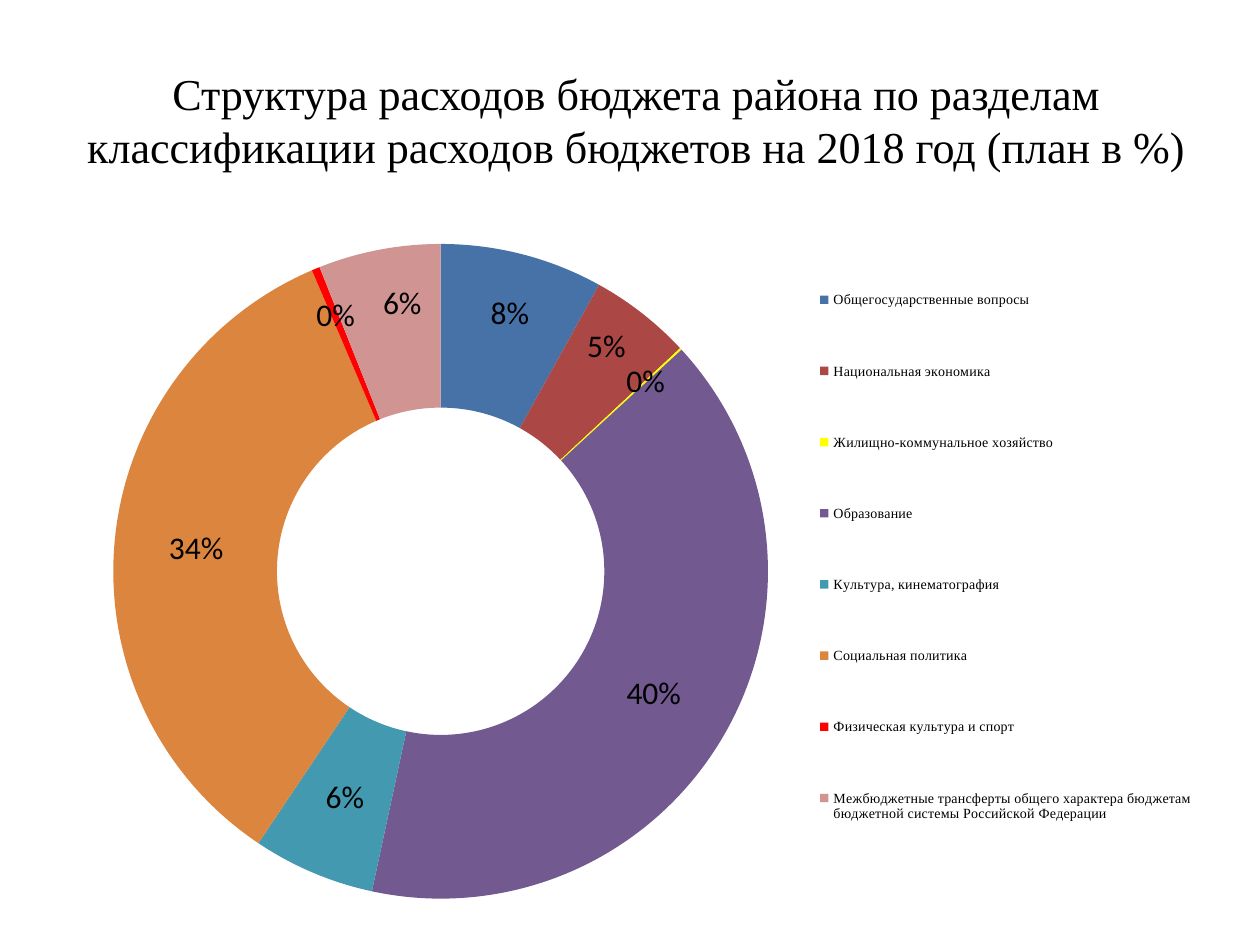
from lxml import etree
from pptx import Presentation, util as u
from pptx.chart.data import CategoryChartData
from pptx.dml.color import RGBColor
from pptx.enum import chart as ch, text
from pptx.oxml.ns import qn

TITLE = ("Структура расходов бюджета района по разделам "
         "классификации расходов бюджетов на 2018 год (план в %)")
SECTIONS = [  # section, share of spending in %, colour, label shift in % of the chart
    ("Общегосударственные вопросы", 8, "blue", (0.7, -2.9)),
    ("Национальная экономика", 5, "brick", (1.3, -4.5)),
    ("Жилищно-коммунальное хозяйство", 0.1, "yellow", (2.2, -3.3)),
    ("Образование", 40, "purple", None),
    ("Культура, кинематография", 6, "teal", None),
    ("Социальная политика", 34, "orange", None),
    ("Физическая культура и спорт", 0.4, "red", (-1, -4.2)),
    ("Межбюджетные трансферты общего характера бюджетам "
     "бюджетной системы Российской Федерации", 6, "pink", (0.7, -3.9)),
]
COLORS = {
    "text": "000000", "blue": "4672A8", "brick": "AB4744", "yellow": "FFFF00",
    "purple": "725990", "teal": "4299B0", "orange": "DC853E", "red": "FF0000",
    "pink": "D09493",
}
SERIF, SANS = "Times New Roman", "Calibri"
PERCENT = "0%"
WIDTH, HEIGHT = u.Inches(10), u.Inches(7.5)
MARGIN = u.Inches(0.55)
CONTENT_WIDTH = u.Inches(9)
# Percent of the chart area: left, top, width, height
RING_AREA = (3.5, 2.5, 58.5, 95)
LEGEND_AREA = (65.6, 1.4, 34, 93)
EDGES = [("xMode", "edge"), ("yMode", "edge")]


def style(font, name, size):
    font.name, font.size, font.bold = name, u.Pt(size), False
    font.color.rgb = RGBColor.from_string(COLORS["text"])


def place(parent, area, settings, after=None):
    """Give a chart part a manual layout, in percent of the chart area."""
    for old in parent.findall(qn("c:layout")):
        parent.remove(old)
    layout = etree.Element(qn("c:layout"))
    manual = etree.SubElement(layout, qn("c:manualLayout"))
    shares = [(tag, round(part / 100, 4)) for tag, part in zip("xywh", area)]
    for tag, value in settings + shares:
        etree.SubElement(manual, qn("c:" + tag)).set("val", str(value))
    if after is None:
        parent.insert(0, layout)
    else:
        after.addnext(layout)
    return layout


def shift_label(series, index, shift):
    """Move one percentage label away from its usual place."""
    style(series.points[index].data_label.font, SANS, 18)
    label = next(item for item in series._element.iter(qn("c:dLbl"))
                 if item.find(qn("c:idx")).get("val") == str(index))
    label.find(qn("c:showVal")).set("val", "0")
    label.find(qn("c:showPercent")).set("val", "1")
    layout = place(label, shift, [], after=label.find(qn("c:idx")))
    number_format = etree.Element(qn("c:numFmt"), formatCode=PERCENT, sourceLinked="0")
    layout.addnext(number_format)


prs = Presentation()
prs.slide_width, prs.slide_height = WIDTH, HEIGHT
slide = prs.slides.add_slide(prs.slide_layouts[6])

heading = slide.shapes.add_textbox(MARGIN, u.Inches(0.32), CONTENT_WIDTH, u.Inches(1.25)).text_frame
heading.word_wrap = True
heading.vertical_anchor = text.MSO_ANCHOR.MIDDLE
heading.text = TITLE
heading.paragraphs[0].alignment = text.PP_ALIGN.CENTER
style(heading.paragraphs[0].runs[0].font, SERIF, 25.2)

data = CategoryChartData(number_format="General")
data.categories = [section[0] for section in SECTIONS]
data.add_series("Расходы", [section[1] for section in SECTIONS])
chart = slide.shapes.add_chart(ch.XL_CHART_TYPE.DOUGHNUT, MARGIN, u.Inches(1.8),
                               CONTENT_WIDTH, u.Inches(5.47), data).chart
chart.has_title = False
style(chart.font, SANS, 18)

ring = chart.plots[0]
ring.vary_by_categories = True
ring._element.find(qn("c:holeSize")).set("val", "50")
spending = ring.series[0]

labels = spending.data_labels
labels.show_percentage, labels.show_value = True, False
labels.number_format, labels.number_format_is_linked = PERCENT, False
style(labels.font, SANS, 18)

for index, (_, _, color, shift) in enumerate(SECTIONS):
    fill = spending.points[index].format.fill
    fill.solid()
    fill.fore_color.rgb = RGBColor.from_string(COLORS[color])
    if shift:
        shift_label(spending, index, shift)

chart.has_legend = True
legend = chart.legend
legend.position = ch.XL_LEGEND_POSITION.RIGHT
legend.include_in_layout = False
style(legend.font, SERIF, 8)

place(ring._element.getparent(), RING_AREA, [("layoutTarget", "inner")] + EDGES)
place(legend._element, LEGEND_AREA, EDGES, after=legend._element.find(qn("c:legendPos")))

prs.save("out.pptx")
